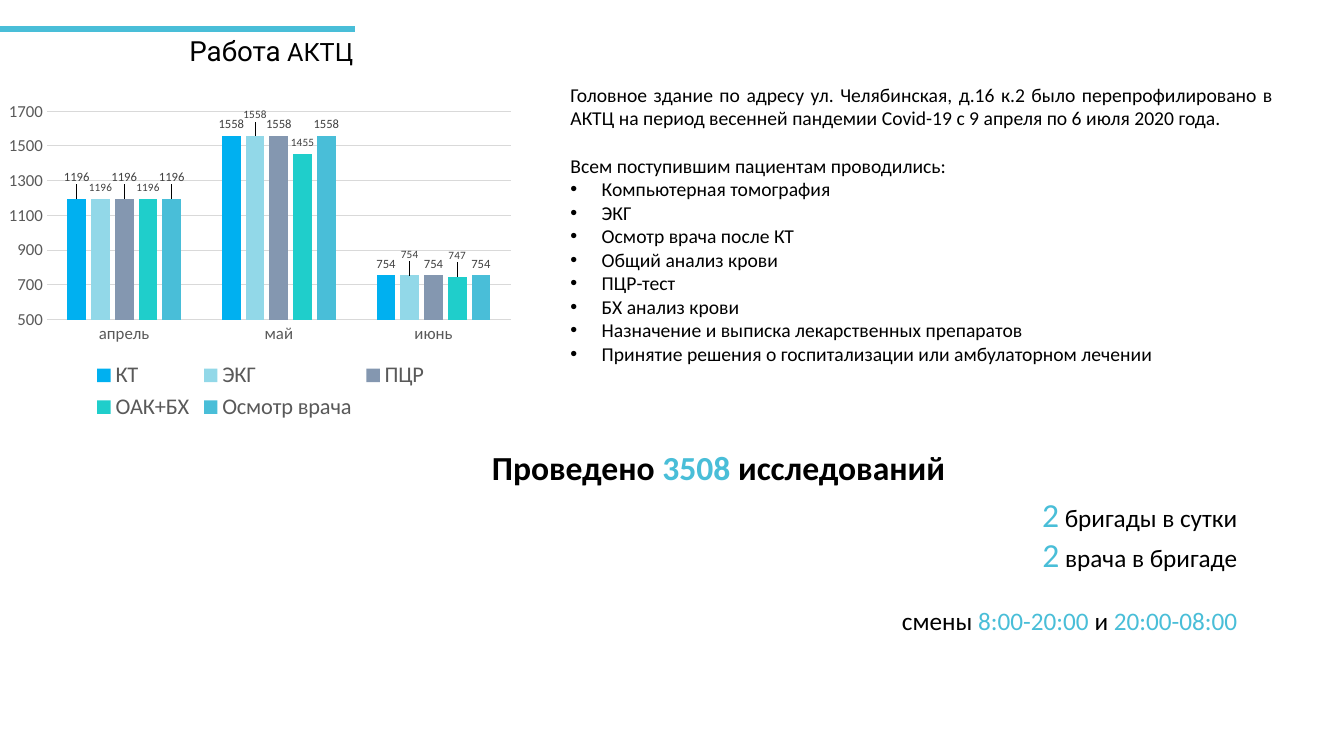
from lxml import etree
from pptx import Presentation
from pptx.chart.data import CategoryChartData
from pptx.dml.color import RGBColor
from pptx.enum.chart import XL_CHART_TYPE as ChartType, XL_LABEL_POSITION as LabelPosition
from pptx.enum.chart import XL_LEGEND_POSITION as LegendPosition, XL_TICK_MARK as TickMark
from pptx.enum.shapes import MSO_CONNECTOR as Connector, MSO_SHAPE as Shape
from pptx.enum.text import MSO_ANCHOR as Anchor, PP_ALIGN as Align
from pptx.oxml import parse_xml
from pptx.oxml.ns import nsdecls, qn
from pptx.util import Inches, Pt

BLACK = RGBColor(0x00, 0x00, 0x00)
WHITE = RGBColor(0xFF, 0xFF, 0xFF)
ACCENT = RGBColor(0x49, 0xBE, 0xD8)
AXIS_TEXT = RGBColor(0x59, 0x59, 0x59)
LABEL_TEXT = RGBColor(0x40, 0x40, 0x40)
GRID = RGBColor(0xD9, 0xD9, 0xD9)
BRIGHT_BLUE = RGBColor(0x00, 0xB0, 0xF0)
PALE_BLUE = RGBColor(0x92, 0xD8, 0xE8)
SLATE = RGBColor(0x84, 0x97, 0xB0)
TURQUOISE = RGBColor(0x1F, 0xCE, 0xCB)


def style_font(font, size, color=BLACK, name="Calibri", bold=False):
    values = {"size": Pt(size), "name": name, "bold": bold}
    for attribute, value in values.items():
        setattr(font, attribute, value)
    font.color.rgb = color


def add_runs(paragraph, runs, **format_values):
    for text, size, color in runs:
        run = paragraph.add_run()
        run.text = text
        style_font(run.font, size, color, **format_values)


presentation = Presentation()
presentation.slide_width = Inches(13.33)
presentation.slide_height = Inches(7.5)
slide = presentation.slides.add_slide(presentation.slide_layouts[6])

description = slide.shapes.add_textbox(Inches(5.56), Inches(0.77), Inches(7.17), Inches(2.93))
description.text_frame.word_wrap = True
introduction = [
    "Головное здание по адресу ул. Челябинская, д.16 к.2 было перепрофилировано в "
    "АКТЦ на период весенней пандемии Covid-19 с 9 апреля по 6 июля 2020 года.",
    "Всем поступившим пациентам проводились:",
]
procedures = [
    "Компьютерная томография",
    "ЭКГ",
    "Осмотр врача после КТ",
    "Общий анализ крови",
    "ПЦР-тест",
    "БХ анализ крови",
    "Назначение и выписка лекарственных препаратов",
    "Принятие решения о госпитализации или амбулаторном лечении",
]
for index, text in enumerate(introduction + procedures):
    frame = description.text_frame
    paragraph = frame.add_paragraph() if index else frame.paragraphs[0]
    paragraph.alignment = Align.JUSTIFY
    if index == 1:
        paragraph.space_before = Pt(17)
    if text in procedures:
        properties = paragraph._p.get_or_add_pPr()
        properties.set("marL", str(Inches(0.31)))
        properties.set("indent", str(-Inches(0.31)))
        bullet_font = etree.SubElement(properties, qn("a:buFont"))
        bullet_font.set("typeface", "Arial")
        bullet = etree.SubElement(properties, qn("a:buChar"))
        bullet.set("char", "•")
    add_runs(paragraph, [(text, 14, BLACK)])

examinations = [
    ("КТ", (1196, 1558, 754), BRIGHT_BLUE, 9, (0,)),
    ("ЭКГ", (1196, 1558, 754), PALE_BLUE, 8, (1, 2)),
    ("ПЦР", (1196, 1558, 754), SLATE, 9, (0,)),
    ("ОАК+БХ", (1196, 1455, 747), TURQUOISE, 8, (2,)),
    ("Осмотр врача", (1196, 1558, 754), ACCENT, 9, (0,)),
]
chart_data = CategoryChartData()
chart_data.categories = ["апрель", "май", "июнь"]
for name, values, *_ in examinations:
    chart_data.add_series(name, values)
chart = slide.shapes.add_chart(
    ChartType.COLUMN_CLUSTERED, Inches(0), Inches(0.94), Inches(5.17), Inches(3.28), chart_data
).chart
style_font(chart.font, 10)
chart.has_title = False
chart.has_legend = True
chart.legend.position = LegendPosition.BOTTOM
chart.legend.include_in_layout = False
style_font(chart.legend.font, 16, AXIS_TEXT)

for axis in (chart.category_axis, chart.value_axis):
    axis.major_tick_mark = axis.minor_tick_mark = TickMark.NONE
    style_font(axis.tick_labels.font, 12, AXIS_TEXT)
value_scale = {"minimum_scale": 500, "maximum_scale": 1700, "major_unit": 200}
for attribute, value in value_scale.items():
    setattr(chart.value_axis, attribute, value)
chart.value_axis.format.line.fill.background()
for line in (chart.category_axis.format.line, chart.value_axis.major_gridlines.format.line):
    line.color.rgb = GRID
    line.width = Pt(0.75)

plot = chart.plots[0]
plot.vary_by_categories = False
plot.gap_width = 219
plot.overlap = -27
for series, (_, _, color, label_size, raised) in zip(plot.series, examinations):
    series.format.fill.solid()
    series.format.fill.fore_color.rgb = color
    labels = series.data_labels
    labels.show_value = True
    labels.position = LabelPosition.OUTSIDE_END
    style_font(labels.font, label_size, LABEL_TEXT)
    for point_index in raised:
        label = series.points[point_index].data_label
        label.position = LabelPosition.OUTSIDE_END
        style_font(label.font, label_size, LABEL_TEXT)
    for label_index in series._element.findall(".//" + qn("c:dLbl") + "/" + qn("c:idx")):
        label_index.addnext(parse_xml(
            f'<c:layout {nsdecls("c")}><c:manualLayout><c:x val="0"/><c:y val="-0.03"/>'
            '</c:manualLayout></c:layout>'
        ))

plot_area = chart._chartSpace.find(".//" + qn("c:plotArea"))
for layout in plot_area.findall(qn("c:layout")):
    plot_area.remove(layout)
plot_area.insert(0, parse_xml(
    f'<c:layout {nsdecls("c")}><c:manualLayout><c:layoutTarget val="inner"/>'
    '<c:xMode val="edge"/><c:yMode val="edge"/><c:x val="0.09"/><c:y val="0.05"/>'
    '<c:w val="0.89"/><c:h val="0.63"/></c:manualLayout></c:layout>'
))

title = slide.shapes.add_textbox(Inches(1.78), Inches(0.35), Inches(1.89), Inches(0.34))
title.text_frame.word_wrap = True
title.text_frame.vertical_anchor = Anchor.MIDDLE
title_paragraph = title.text_frame.paragraphs[0]
title_paragraph.line_spacing = 0.9
add_runs(title_paragraph, [("Работа", 19.8, BLACK), (" АКТЦ", 18, BLACK)], name="Roboto")

title_line = slide.shapes.add_connector(
    Connector.STRAIGHT, Inches(0), Inches(0.29), Inches(3.52), Inches(0.29)
)
title_line.line.color.rgb = ACCENT
title_line.line.width = Pt(4.5)
etree.SubElement(title_line._element.spPr, qn("a:effectLst"))

shifts = slide.shapes.add_shape(
    Shape.RECTANGLE, Inches(8.7), Inches(4.85), Inches(3.67), Inches(1.51)
)
shifts.shadow.inherit = False
shifts.fill.solid()
shifts.fill.fore_color.rgb = WHITE
shifts.line.fill.background()
shifts.text_frame.word_wrap = True
shifts.text_frame.vertical_anchor = Anchor.TOP
shift_lines = [
    ([("2", 24, ACCENT), (" бригады в сутки", 18, BLACK)], 0),
    ([("2", 24, ACCENT), (" врача в бригаде", 18, BLACK)], 0),
    ([("смены ", 18, BLACK), ("8:00-20:00", 18, ACCENT),
      (" и ", 18, BLACK), ("20:00-08:00", 18, ACCENT)], 22),
]
for index, (runs, space_before) in enumerate(shift_lines):
    frame = shifts.text_frame
    paragraph = frame.add_paragraph() if index else frame.paragraphs[0]
    paragraph.alignment = Align.RIGHT
    paragraph.space_before = Pt(space_before)
    add_runs(paragraph, runs)

total = slide.shapes.add_textbox(Inches(4.78), Inches(4.38), Inches(4.82), Inches(0.5))
total.text_frame.word_wrap = False
add_runs(
    total.text_frame.paragraphs[0],
    [("Проведено ", 24, BLACK), ("3508", 24, ACCENT), (" исследований", 24, BLACK)],
    bold=True,
)

presentation.save("out.pptx")
